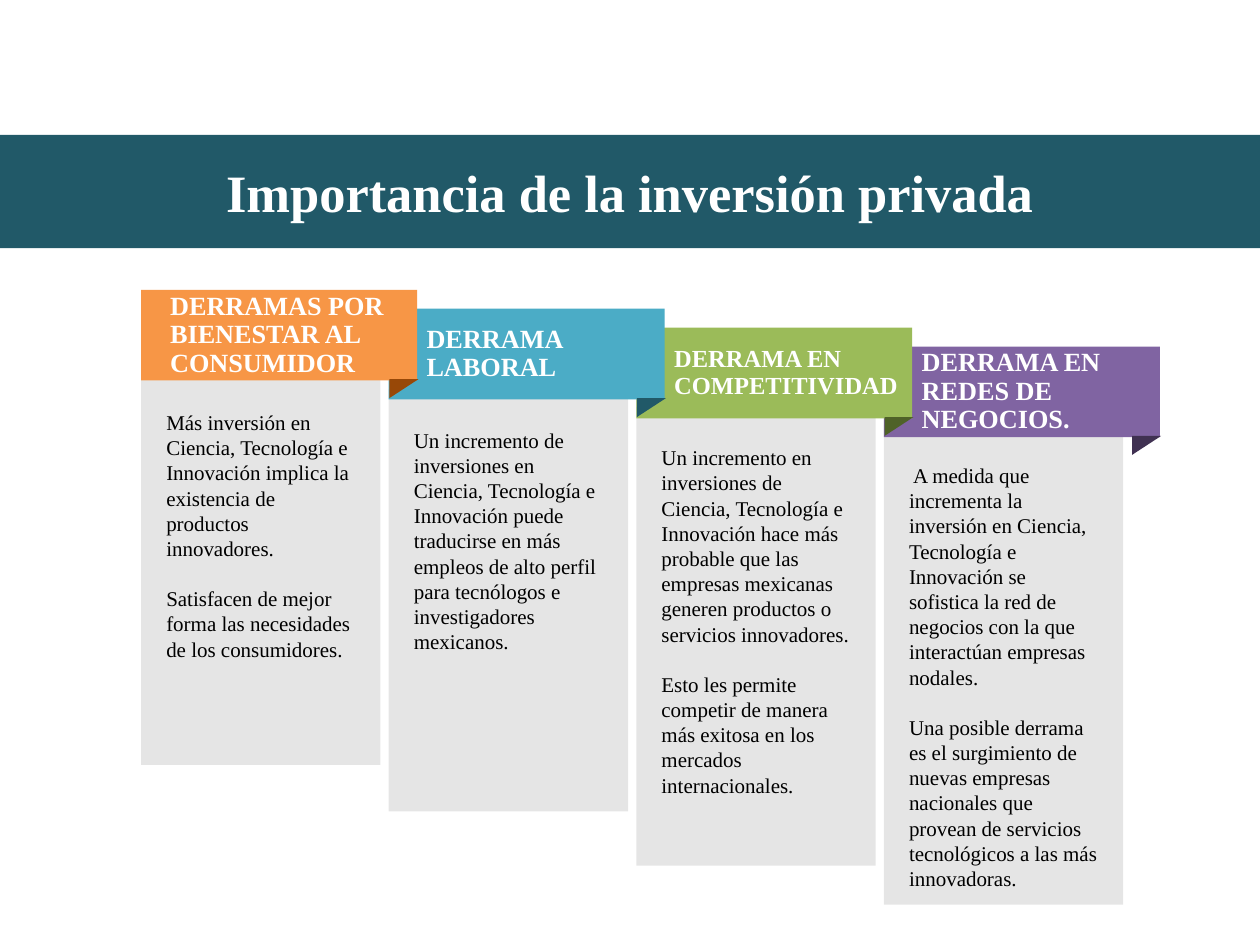
from dataclasses import dataclass

from lxml import etree
from pptx import Presentation
from pptx.dml.color import RGBColor
from pptx.enum.shapes import MSO_SHAPE
from pptx.enum.text import MSO_ANCHOR, PP_ALIGN
from pptx.oxml.ns import qn
from pptx.util import Inches, Pt

RECTANGLE = MSO_SHAPE.RECTANGLE
TRIANGLE = MSO_SHAPE.RIGHT_TRIANGLE
TOP, MIDDLE = MSO_ANCHOR.TOP, MSO_ANCHOR.MIDDLE
LEFT, CENTER = PP_ALIGN.LEFT, PP_ALIGN.CENTER


@dataclass(frozen=True)
class Theme:
    font: str = "Times New Roman"
    band: str = "215968"
    light: str = "FFFFFF"
    dark: str = "000000"
    panel_opacity: int = 10
    title_size: float = 30
    body_size: float = 12
    body_gap: float = 14.3


@dataclass(frozen=True)
class Column:
    heading: str
    paragraphs: tuple[str, ...]
    color: str
    fold_color: str
    panel_height: float
    heading_size: float = 15
    heading_inset: float = 0.3


THEME = Theme()

COLUMNS = (
    Column(
        "DERRAMAS POR BIENESTAR AL CONSUMIDOR",
        ("Más inversión en Ciencia, Tecnología e Innovación implica la "
         "existencia de productos innovadores.",
         "Satisfacen de mejor forma las necesidades de los consumidores."),
        "F79646", "984807", 3.12, heading_inset=0.23),
    Column(
        "DERRAMA LABORAL",
        ("Un incremento de inversiones en Ciencia, Tecnología e Innovación "
         "puede traducirse en más empleos de alto perfil para tecnólogos e "
         "investigadores mexicanos.",),
        "4BACC6", "215968", 3.35),
    Column(
        "DERRAMA EN COMPETITIVIDAD",
        ("Un incremento en inversiones de Ciencia, Tecnología e Innovación "
         "hace más probable que las empresas mexicanas generen productos o "
         "servicios innovadores.",
         "Esto les permite competir de manera más exitosa en los mercados "
         "internacionales."),
        "9BBB59", "4F6228", 3.64, heading_size=14),
    Column(
        "DERRAMA EN REDES DE NEGOCIOS.",
        (" A medida que incrementa la inversión en Ciencia, Tecnología e "
         "Innovación se sofistica la red de negocios con la que interactúan "
         "empresas nodales.",
         "Una posible derrama es el surgimiento de nuevas empresas nacionales "
         "que provean de servicios tecnológicos a las más innovadoras."),
        "8064A2", "403152", 3.81),
)

# Staircase of columns: first position and step, in inches
FIRST_LEFT, COLUMN_STEP = 1.12, 1.965
HEADER_TOP, HEADER_STEP = 2.3, 0.15
PANEL_TOP, PANEL_STEP = 2.95, 0.14
HEADER_WIDTH, HEADER_HEIGHT = 2.19, 0.72
PANEL_WIDTH = 1.9
FOLD_WIDTH, FOLD_HEIGHT = 0.15, 0.23
FOLD_RIGHT, FOLD_DOWN = 2.01, 0.67


def add_block(page, kind, left: float, top: float, width: float,
              height: float, color: str):
    shape = page.shapes.add_shape(
        kind, Inches(left), Inches(top), Inches(width), Inches(height))
    shape.shadow.inherit = False
    shape.fill.solid()
    shape.fill.fore_color.rgb = RGBColor.from_string(color)
    shape.line.fill.background()
    return shape


def set_opacity(shape, percent: int) -> None:
    color = shape.fill._xPr.find(qn("a:solidFill"))[0]
    etree.SubElement(color, qn("a:alpha")).set("val", str(percent * 1000))


def write_text(shape, paragraphs: tuple[str, ...], *, size: float, color: str,
               bold: bool = False, align=LEFT, anchor=TOP,
               insets: tuple[float, ...] = (0.1, 0.05, 0.1, 0.05),
               line_spacing: float = 1.0, gap: float = 0,
               after: float = 0) -> None:
    frame = shape.text_frame
    frame.word_wrap = True
    frame.vertical_anchor = anchor
    (frame.margin_left, frame.margin_top,
     frame.margin_right, frame.margin_bottom) = map(Inches, insets)
    for index, text in enumerate(paragraphs):
        para = frame.add_paragraph() if index else frame.paragraphs[0]
        para.alignment = align
        para.line_spacing = line_spacing
        para.space_before = Pt(gap if index else 0)
        para.space_after = Pt(after)
        span = para.add_run()
        span.text = text
        span.font.name = THEME.font
        span.font.size = Pt(size)
        span.font.bold = bold
        span.font.color.rgb = RGBColor.from_string(color)


def add_title(page, text: str) -> None:
    title = page.shapes.title
    title.left, title.top = Inches(0), Inches(1.07)
    title.width, title.height = Inches(10), Inches(0.9)
    title.fill.solid()
    title.fill.fore_color.rgb = RGBColor.from_string(THEME.band)
    write_text(title, (text,), size=THEME.title_size, color=THEME.light,
               bold=True, align=CENTER, anchor=MIDDLE)


def add_column(page, index: int, column: Column) -> None:
    left = FIRST_LEFT + index * COLUMN_STEP
    panel = add_block(page, RECTANGLE, left, PANEL_TOP + index * PANEL_STEP,
                      PANEL_WIDTH, column.panel_height, THEME.dark)
    set_opacity(panel, THEME.panel_opacity)
    write_text(panel, column.paragraphs, size=THEME.body_size,
               color=THEME.dark, insets=(0.2, 0.3, 0.2, 0.2),
               gap=THEME.body_gap)
    header = add_block(page, RECTANGLE, left, HEADER_TOP + index * HEADER_STEP,
                       HEADER_WIDTH, HEADER_HEIGHT, column.color)
    write_text(header, (column.heading,), size=column.heading_size,
               color=THEME.light, bold=True, anchor=MIDDLE,
               insets=(column.heading_inset, 0, 0, 0),
               line_spacing=0.9, after=2)


def add_fold(page, index: int, column: Column) -> None:
    fold = add_block(page, TRIANGLE,
                     FIRST_LEFT + index * COLUMN_STEP + FOLD_RIGHT,
                     HEADER_TOP + index * HEADER_STEP + FOLD_DOWN,
                     FOLD_WIDTH, FOLD_HEIGHT, column.fold_color)
    fold.rotation = 90


def main() -> None:
    deck = Presentation()
    deck.slide_width, deck.slide_height = Inches(10), Inches(7.5)
    page = deck.slides.add_slide(deck.slide_layouts[5])
    add_title(page, "Importancia de la inversión privada")

    # Right to left, so that each header overlaps the next one
    for index, column in reversed(list(enumerate(COLUMNS))):
        add_column(page, index, column)

    # Ribbon folds on top
    for index, column in enumerate(COLUMNS):
        add_fold(page, index, column)

    deck.save("out.pptx")


if __name__ == "__main__":
    main()
